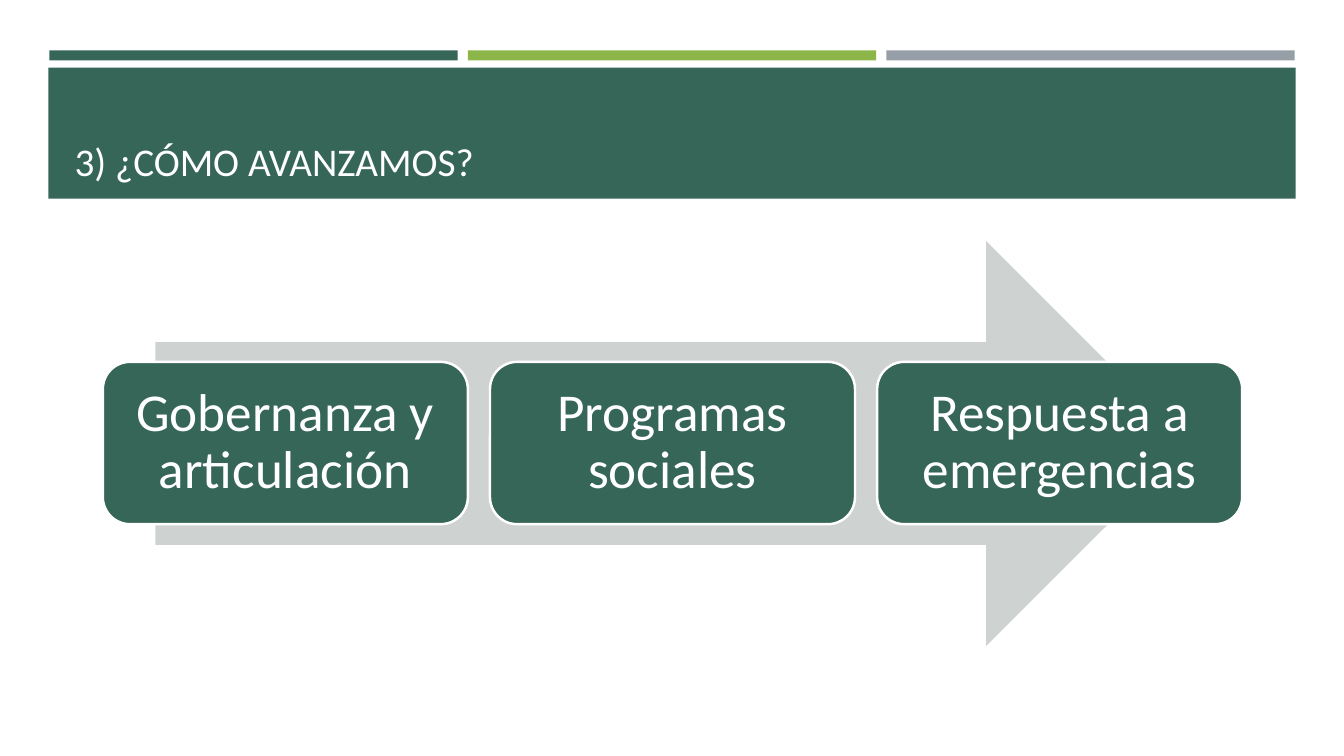
from dataclasses import dataclass

from pptx import Presentation
from pptx.dml.color import RGBColor
from pptx.enum.shapes import MSO_SHAPE as Shape
from pptx.enum.text import MSO_ANCHOR as Anchor, MSO_AUTO_SIZE as AutoSize, PP_ALIGN as Align
from pptx.util import Pt

EMU_PER_PX = 9144


def px(length):
    return length * EMU_PER_PX


@dataclass(frozen=True)
class Theme:
    font: str = "Calibri"
    green: str = "366658"
    lime: str = "8CB64A"
    gray: str = "969FA7"
    pale: str = "CED3D1"
    white: str = "FFFFFF"
    title_size: int = 28
    step_size: int = 38
    outline: float = 1.75


class SlideBuilder:
    def __init__(self, slide, theme):
        self.slide = slide
        self.theme = theme

    def block(self, kind, left, top, width, height, fill):
        block = self.slide.shapes.add_shape(kind, px(left), px(top), px(width), px(height))
        block.shadow.inherit = False
        block.fill.solid()
        block.fill.fore_color.rgb = RGBColor.from_string(fill)
        block.line.fill.background()
        return block

    def label(self, holder, text, size, align, anchor):
        frame = holder.text_frame
        frame.text = text
        frame.word_wrap = True
        frame.auto_size = AutoSize.NONE
        frame.vertical_anchor = anchor
        paragraph = frame.paragraphs[0]
        paragraph.alignment = align
        font = paragraph.runs[0].font
        font.name = self.theme.font
        font.size = Pt(size)
        font.color.rgb = RGBColor.from_string(self.theme.white)
        return frame

    def title(self, text, left, top, width, height, banner):
        title = self.slide.shapes.title
        title.left, title.top, title.width, title.height = map(px, (left, top, width, height))
        self.label(title, text, self.theme.title_size, Align.LEFT, Anchor.BOTTOM)
        banner.element.addnext(title.element)

    def step(self, text, left, top, width, height, inset):
        step = self.block(Shape.ROUNDED_RECTANGLE, left, top, width, height, self.theme.green)
        step.line.color.rgb = RGBColor.from_string(self.theme.white)
        step.line.width = Pt(self.theme.outline)
        frame = self.label(step, text, self.theme.step_size, Align.CENTER, Anchor.MIDDLE)
        frame.margin_left = frame.margin_right = px(inset)
        frame.margin_top = frame.margin_bottom = px(inset)
        frame.paragraphs[0].line_spacing = 0.9


def main():
    deck = Presentation()
    deck.slide_width, deck.slide_height = px(1333), px(750)
    theme = Theme()
    builder = SlideBuilder(deck.slides.add_slide(deck.slide_layouts[5]), theme)

    for column, color in enumerate((theme.green, theme.lime, theme.gray)):
        builder.block(Shape.RECTANGLE, 49 + 415 * column, 50, 405, 10, color)
    banner = builder.block(Shape.RECTANGLE, 48, 67, 1237, 130, theme.green)
    builder.title("3) ¿CÓMO AVANZAMOS?", 64, 77, 1206, 111, banner)

    builder.block(Shape.RIGHT_ARROW, 154, 239, 1025, 402, theme.pale)
    steps = ("Gobernanza y articulación", "Programas sociales", "Respuesta a emergencias")
    for column, text in enumerate(steps):
        builder.step(text, 102 + 384 * column, 359, 362, 161, 24)

    deck.save("out.pptx")


if __name__ == "__main__":
    main()
